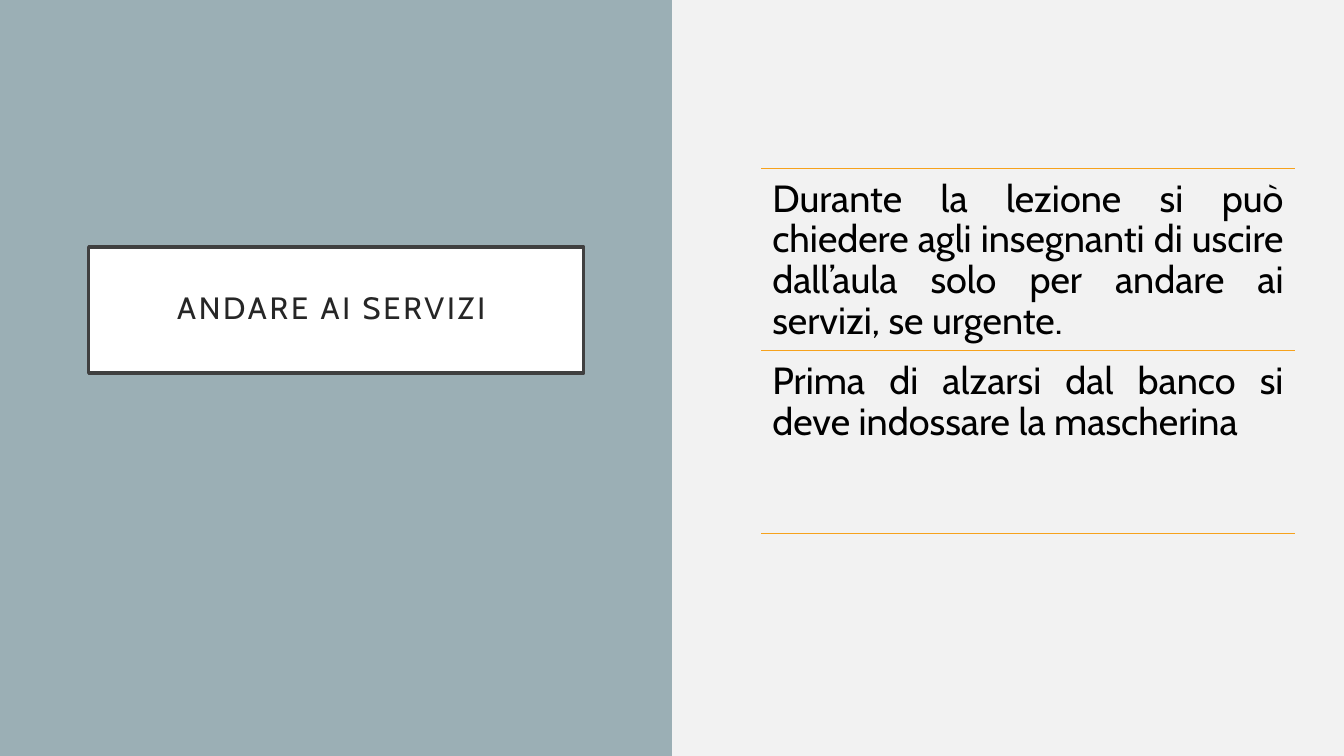
from dataclasses import dataclass

from lxml.etree import SubElement
from pptx import Presentation
from pptx.dml.color import RGBColor
from pptx.enum.shapes import MSO_CONNECTOR, MSO_SHAPE
from pptx.enum.text import MSO_ANCHOR, MSO_AUTO_SIZE, PP_ALIGN
from pptx.oxml.ns import qn
from pptx.slide import Slide
from pptx.text.text import TextFrame
from pptx.util import Inches, Pt


@dataclass(frozen=True)
class Theme:
    background: str = "F2F2F2"
    panel: str = "9BAFB5"
    box_fill: str = "FFFFFF"
    box_line: str = "404040"
    title: str = "262626"
    body: str = "000000"
    rule: str = "F6A21D"
    font: str = "Cabin"
    title_size: float = 22
    body_size: float = 27
    title_spacing: float = 2


@dataclass(frozen=True)
class TextStyle:
    size: float
    color: str
    align: PP_ALIGN
    anchor: MSO_ANCHOR
    inset: float
    space_after: float = 0
    letter_spacing: float = 0


THEME = Theme()
TITLE_STYLE = TextStyle(THEME.title_size, THEME.title, PP_ALIGN.CENTER,
                        MSO_ANCHOR.MIDDLE, 0.2,
                        letter_spacing=THEME.title_spacing)
BODY_STYLE = TextStyle(THEME.body_size, THEME.body, PP_ALIGN.JUSTIFY,
                       MSO_ANCHOR.TOP, 0.11,
                       space_after=0.35 * THEME.body_size)

SLIDE_W, SLIDE_H = 13.33, 7.5
LIST_LEFT, LIST_TOP, LIST_W, ROW_H = 7.55, 1.67, 5.29, 1.81

TITLE = "ANDARE AI SERVIZI "
RULES = [
    "Durante la lezione si può chiedere agli insegnanti di uscire "
    "dall’aula solo per andare ai servizi, se urgente.",
    "Prima di alzarsi dal banco si deve indossare la mascherina",
]


def rgb(value: str) -> RGBColor:
    return RGBColor.from_string(value)


def write(tf: TextFrame, text: str, style: TextStyle) -> None:
    inset = Inches(style.inset)
    frame_format = {
        "word_wrap": True, "auto_size": MSO_AUTO_SIZE.NONE,
        "vertical_anchor": style.anchor,
        "margin_left": inset, "margin_right": inset,
        "margin_top": inset, "margin_bottom": inset,
    }
    for name, value in frame_format.items():
        setattr(tf, name, value)

    p = tf.paragraphs[0]
    paragraph_format = {
        "alignment": style.align, "line_spacing": 0.9,
        "space_before": Pt(0), "space_after": Pt(style.space_after),
    }
    for name, value in paragraph_format.items():
        setattr(p, name, value)

    r = p.add_run()
    r.text = text
    for name, value in {"name": THEME.font, "size": Pt(style.size)}.items():
        setattr(r.font, name, value)
    r.font.color.rgb = rgb(style.color)
    if style.letter_spacing:
        r._r.get_or_add_rPr().set("spc", str(int(style.letter_spacing * 100)))


def add_rule_line(s: Slide, y: float) -> None:
    line = s.shapes.add_connector(
        MSO_CONNECTOR.STRAIGHT, Inches(LIST_LEFT), Inches(y),
        Inches(LIST_LEFT + LIST_W), Inches(y))
    line.line.color.rgb = rgb(THEME.rule)
    line.line.width = Pt(1)
    SubElement(line._element.spPr, qn("a:effectLst"))


def add_title(s: Slide) -> None:
    title = s.shapes.title
    place = {"left": 0.88, "top": 2.45, "width": 4.91, "height": 1.25}
    for name, value in place.items():
        setattr(title, name, Inches(value))
    title.fill.solid()
    title.fill.fore_color.rgb = rgb(THEME.box_fill)
    title.line.color.rgb = rgb(THEME.box_line)
    title.line.width = Pt(2.5)
    write(title.text_frame, TITLE, TITLE_STYLE)


def add_panel(s: Slide) -> None:
    panel = s.shapes.add_shape(MSO_SHAPE.RECTANGLE, 0, 0,
                               Inches(SLIDE_W / 2), Inches(SLIDE_H))
    panel.shadow.inherit = False
    panel.fill.solid()
    panel.fill.fore_color.rgb = rgb(THEME.panel)
    panel.line.fill.background()
    # Keep the panel behind the title
    s.shapes.title.element.addprevious(panel.element)


def main() -> None:
    prs = Presentation()
    prs.slide_width, prs.slide_height = Inches(SLIDE_W), Inches(SLIDE_H)
    s = prs.slides.add_slide(prs.slide_layouts[5])

    # Background, left panel and title box
    s.background.fill.solid()
    s.background.fill.fore_color.rgb = rgb(THEME.background)
    add_panel(s)
    add_title(s)

    # Ruled list of behaviours, closed by a last line
    for i, text in enumerate(RULES):
        y = LIST_TOP + i * ROW_H
        add_rule_line(s, y)
        box = s.shapes.add_textbox(Inches(LIST_LEFT), Inches(y),
                                   Inches(LIST_W), Inches(ROW_H))
        write(box.text_frame, text, BODY_STYLE)
    add_rule_line(s, LIST_TOP + len(RULES) * ROW_H)

    prs.save("out.pptx")


if __name__ == "__main__":
    main()
